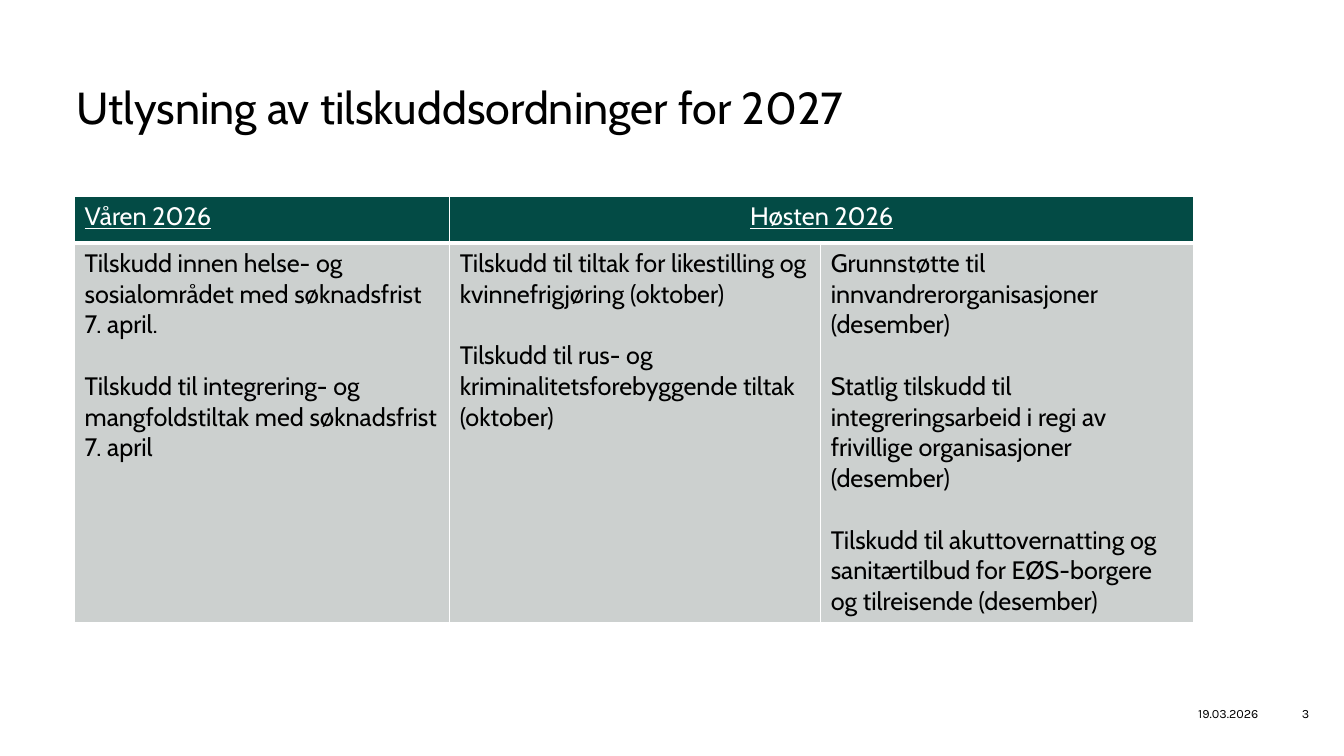
from lxml import etree
from pptx import Presentation
from pptx.dml.color import RGBColor
from pptx.enum.text import MSO_ANCHOR, MSO_AUTO_SIZE, PP_ALIGN
from pptx.oxml.ns import qn
from pptx.util import Inches, Pt

LEFT, CENTER, RIGHT = PP_ALIGN.LEFT, PP_ALIGN.CENTER, PP_ALIGN.RIGHT
TOP, MIDDLE = MSO_ANCHOR.TOP, MSO_ANCHOR.MIDDLE
NO_AUTOFIT = MSO_AUTO_SIZE.NONE
TITLE_ONLY = 5

COLORS = {"text": "000000", "white": "FFFFFF", "header": "034B45", "body": "CCD0CF"}
TITLE_FONT = {"name": "Cabin", "size": Pt(32), "bold": False}
HEADER_FONT = {"name": "Cabin", "size": Pt(18), "bold": False, "underline": True}
BODY_FONT = {"name": "Cabin", "size": Pt(18), "bold": False}
FOOTER_FONT = {"name": "Karla", "size": Pt(9)}

COLUMN_WIDTHS = [3.72, 3.68, 3.7]
ROW_HEIGHTS = [0.46, 3.76]
HEADERS = [(0, "Våren 2026", LEFT), (1, "Høsten 2026", CENTER)]
GRANTS = [
    ["Tilskudd innen helse- og sosialområdet med søknadsfrist 7. april.",
     "Tilskudd til integrering- og mangfoldstiltak med søknadsfrist 7. april"],
    ["Tilskudd til tiltak for likestilling og kvinnefrigjøring (oktober)",
     "Tilskudd til rus- og kriminalitetsforebyggende tiltak (oktober)"],
    ["Grunnstøtte til innvandrerorganisasjoner (desember)",
     "Statlig tilskudd til integreringsarbeid i regi av frivillige organisasjoner (desember)",
     "Tilskudd til akuttovernatting og sanitærtilbud for EØS-borgere og tilreisende (desember)"],
]


class SlideBuilder:
    def __init__(self, presentation):
        self.slide = presentation.slides.add_slide(presentation.slide_layouts[TITLE_ONLY])

    def add_text(self, text_frame, texts, font, color="text", alignment=LEFT):
        for index, text in enumerate(texts):
            paragraph = text_frame.paragraphs[0] if index == 0 else text_frame.add_paragraph()
            paragraph.alignment = alignment
            # One empty line's height separates the entries
            paragraph.space_before = Pt(22 if index else 0)
            run = paragraph.add_run()
            run.text = text
            for name, value in font.items():
                setattr(run.font, name, value)
            run.font.color.rgb = RGBColor.from_string(COLORS[color])

    def title(self, text, left, top, width, height):
        shape = self.slide.shapes.title
        shape.left, shape.top = Inches(left), Inches(top)
        shape.width, shape.height = Inches(width), Inches(height)
        frame_format = {"margin_left": 0, "margin_top": 0, "margin_right": 0, "margin_bottom": 0,
                        "vertical_anchor": TOP, "auto_size": NO_AUTOFIT, "word_wrap": True}
        for name, value in frame_format.items():
            setattr(shape.text_frame, name, value)
        self.add_text(shape.text_frame, [text], TITLE_FONT)

    def footer(self, text, left, width, alignment):
        shape = self.slide.shapes.add_textbox(
            Inches(left), Inches(6.88), Inches(width), Inches(0.4))
        shape.text_frame.word_wrap = True
        shape.text_frame.vertical_anchor = MIDDLE
        self.add_text(shape.text_frame, [text], FOOTER_FONT, alignment=alignment)

    def table(self, left, top, column_widths, row_heights):
        table = self.slide.shapes.add_table(
            len(row_heights), len(column_widths), Inches(left), Inches(top),
            Inches(sum(column_widths)), Inches(sum(row_heights))).table
        for column, width in zip(table.columns, column_widths):
            column.width = Inches(width)
        for row, height in zip(table.rows, row_heights):
            row.height = Inches(height)
        # Header row has a heavier lower rule
        for row_index, fill in enumerate(["header", "body"]):
            sides = {"L": 1, "R": 1, "T": 1 if row_index == 0 else 3,
                     "B": 3 if row_index == 0 else 1}
            for cell in table.rows[row_index].cells:
                self.borders(cell, sides)
                cell.fill.solid()
                cell.fill.fore_color.rgb = RGBColor.from_string(COLORS[fill])
        return table

    def borders(self, cell, sides):
        properties = cell._tc.get_or_add_tcPr()
        for side, points in sides.items():
            line = etree.SubElement(properties, qn(f"a:ln{side}"), w=str(Pt(points)))
            solid_fill = etree.SubElement(line, qn("a:solidFill"))
            etree.SubElement(solid_fill, qn("a:srgbClr"), val=COLORS["white"])


def main():
    presentation = Presentation()
    presentation.slide_width, presentation.slide_height = Inches(13.33), Inches(7.5)
    builder = SlideBuilder(presentation)

    # Title
    builder.title("Utlysning av tilskuddsordninger for 2027", 0.76, 0.79, 10.36, 1.43)

    # Grant table
    table = builder.table(0.74, 1.95, COLUMN_WIDTHS, ROW_HEIGHTS)
    table.cell(0, 1).merge(table.cell(0, 2))
    for column, text, alignment in HEADERS:
        builder.add_text(table.cell(0, column).text_frame, [text], HEADER_FONT, "white", alignment)
    for column, grants in enumerate(GRANTS):
        builder.add_text(table.cell(1, column).text_frame, grants, BODY_FONT)

    # Date and slide number
    builder.footer("19.03.2026", 11.11, 1.47, RIGHT)
    builder.footer("3", 12.57, 0.76, CENTER)

    presentation.save("out.pptx")


if __name__ == "__main__":
    main()
